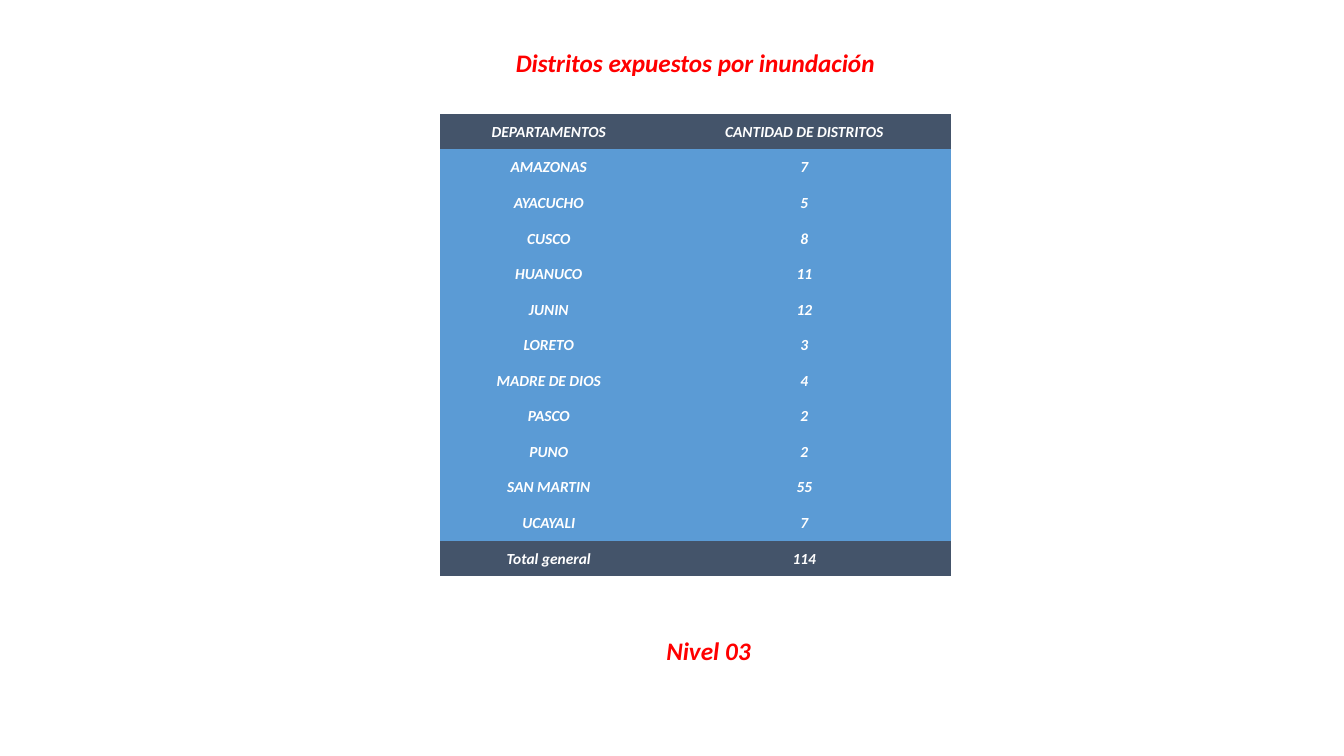
"""Build the slide of districts exposed to flooding."""
from pptx import Presentation
from pptx.dml.color import RGBColor as Rgb
from pptx.enum.text import MSO_ANCHOR as Anchor, MSO_AUTO_SIZE as Fit, PP_ALIGN as Align
from pptx.util import Cm, Pt

HEAD = ("DEPARTAMENTOS", "CANTIDAD DE DISTRITOS")
BODY = [
    ("AMAZONAS", 7),
    ("AYACUCHO", 5),
    ("CUSCO", 8),
    ("HUANUCO", 11),
    ("JUNIN", 12),
    ("LORETO", 3),
    ("MADRE DE DIOS", 4),
    ("PASCO", 2),
    ("PUNO", 2),
    ("SAN MARTIN", 55),
    ("UCAYALI", 7),
]
TOTAL = ("Total general", 114)
TITLES = [
    ("Distritos expuestos por inundación", (12.7, 1.07, 9.65, 1.02), False),
    ("Nivel 03", (16.33, 15.88, 3.05, 1.02), True),
]
RED, WHITE, DARK, BLUE = "FF0000", "FFFFFF", "44546A", "5B9BD5"
LEFT, TOP, HIGH = 11.08, 2.87, 11.66
WIDTHS = (5.5, 7.38)
PAD = Cm(0.02)
NO_GRID = "{2D5ABB26-0587-4C30-8999-92F81FD0307C}"


def tint(code):
    return Rgb.from_string(code)


def write(frame, text, size=11, color=WHITE):
    para = frame.paragraphs[0]
    para.alignment = Align.CENTER
    run = para.add_run()
    run.text = str(text)
    font = run.font
    font.name, font.size = "Calibri", Pt(size)
    font.bold = font.italic = True
    font.color.rgb = tint(color)


def add_title(slide, text, box, wrap):
    frame = slide.shapes.add_textbox(*map(Cm, box)).text_frame
    frame.word_wrap = wrap
    frame.auto_size = Fit.SHAPE_TO_FIT_TEXT
    write(frame, text, size=18, color=RED)


def add_grid(slide):
    rows = [HEAD, *BODY, TOTAL]
    shape = slide.shapes.add_table(
        len(rows), len(HEAD), Cm(LEFT), Cm(TOP), Cm(sum(WIDTHS)), Cm(HIGH))
    table = shape.table
    table.first_row = table.horz_banding = False
    shape._element.xpath(".//a:tableStyleId")[0].text = NO_GRID
    for col, width in zip(table.columns, WIDTHS):
        col.width = Cm(width)
    for row, values in zip(table.rows, rows):
        row.height = Cm(HIGH / len(rows))
        for cell, value in zip(row.cells, values):
            cell.fill.solid()
            cell.fill.fore_color.rgb = tint(BLUE if values in BODY else DARK)
            cell.vertical_anchor = Anchor.MIDDLE
            cell.margin_left = cell.margin_right = cell.margin_top = PAD
            cell.margin_bottom = 0
            write(cell.text_frame, value)


def main():
    deck = Presentation()
    deck.slide_width, deck.slide_height = Cm(33.87), Cm(19.05)
    slide = deck.slides.add_slide(deck.slide_layouts[6])
    for title in TITLES:
        add_title(slide, *title)
    add_grid(slide)
    deck.save("out.pptx")


if __name__ == "__main__":
    main()
